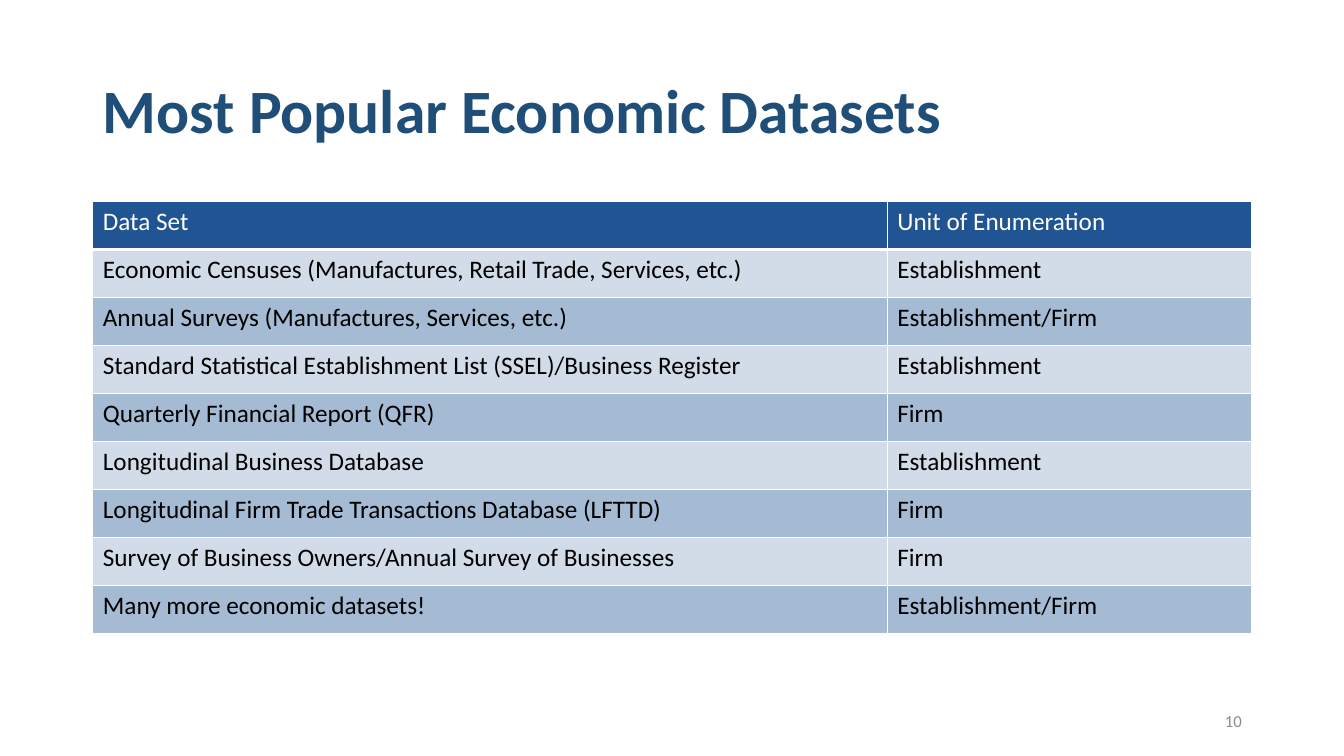
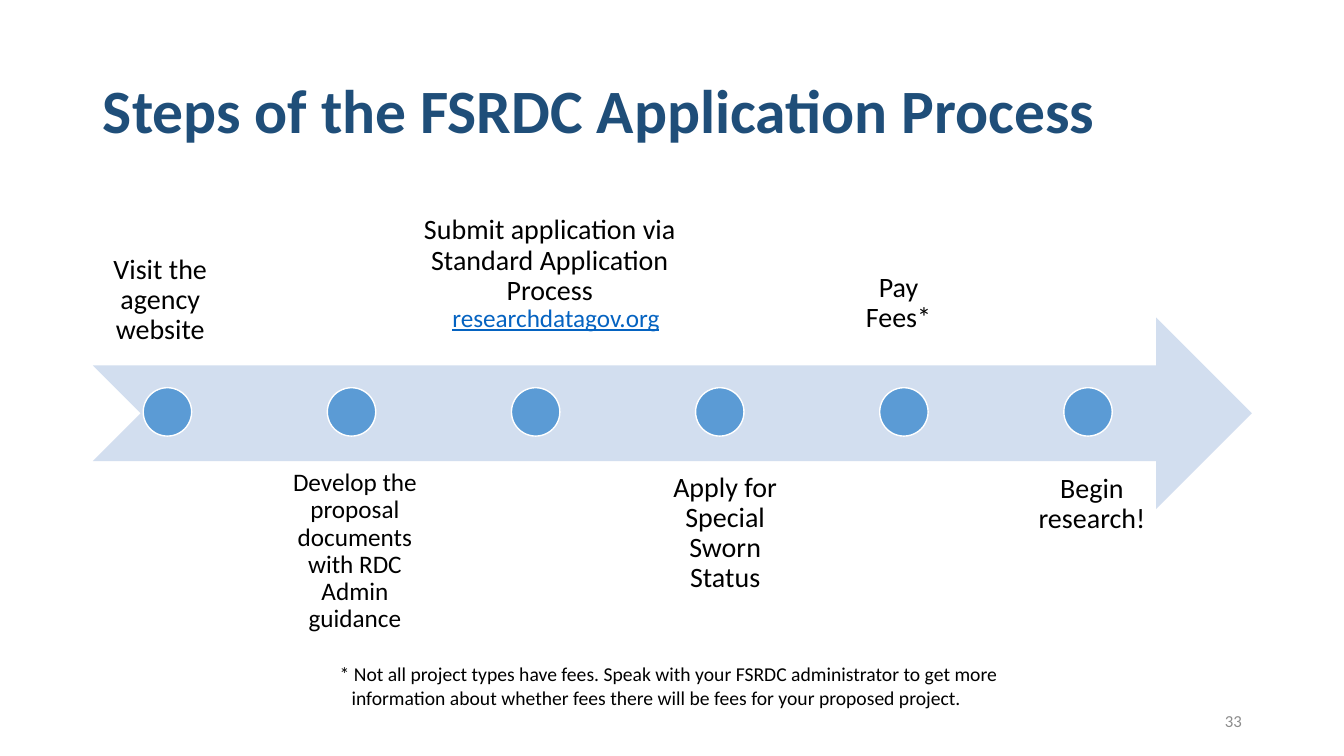
from lxml import etree
from pptx import Presentation
from pptx.dml.color import RGBColor
from pptx.enum.shapes import MSO_SHAPE as Shape
from pptx.enum.text import MSO_ANCHOR as Anchor, MSO_AUTO_SIZE as AutoSize, PP_ALIGN as Align
from pptx.oxml.ns import qn
from pptx.util import Cm, Pt

FONT = "Calibri"
NAVY = RGBColor(0x1F, 0x4E, 0x79)
TABLE_BLUE = RGBColor(0x20, 0x54, 0x93)
PALE_BLUE = RGBColor(0xD2, 0xDE, 0xEF)
DOT_BLUE = RGBColor(0x5B, 0x9B, 0xD5)
LINK_BLUE = RGBColor(0x05, 0x63, 0xC1)
GRAY = RGBColor(0x8C, 0x8C, 0x8C)
BLACK = RGBColor(0, 0, 0)
WHITE = RGBColor(0xFF, 0xFF, 0xFF)

LEFT, CONTENT_WIDTH = 2.34, 29.21
COLUMN_WIDTHS = (20.02, 9.19)
ROW_HEIGHT = 1.21
FIRST_DOT, DOT_STEP, DOT_TOP, DOT_SIZE = 3.61, 4.64, 9.77, 1.22

DATASETS = [
    ("Data Set", "Unit of Enumeration"),
    ("Economic Censuses (Manufactures, Retail Trade, Services, etc.)", "Establishment"),
    ("Annual Surveys (Manufactures, Services, etc.)", "Establishment/Firm"),
    ("Standard Statistical Establishment List (SSEL)/Business Register", "Establishment"),
    ("Quarterly Financial Report (QFR)", "Firm"),
    ("Longitudinal Business Database", "Establishment"),
    ("Longitudinal Firm Trade Transactions Database (LFTTD)", "Firm"),
    ("Survey of Business Owners/Annual Survey of Businesses", "Firm"),
    ("Many more economic datasets!", "Establishment/Firm"),
]

# Text, box (left, top, width, height), text size, inset
STEPS = [
    ("Visit the agency website", (2.34, 4.29, 3.4, 4.83), 20, 0.41),
    ("Develop the proposal documents with RDC Admin guidance",
     (6.81, 11.48, 4.27, 4.83), 18, 0.36),
    ("Submit application via Standard Application Process",
     (10.26, 4.29, 7.19, 3.84), 20, 0.41),
    ("Apply for Special Sworn Status", (16.28, 11.51, 3.99, 4.83), 20, 0.41),
    ("Pay Fees*", (21.36, 6.98, 2.57, 1.83), 20, 0.41),
    ("Begin research!", (25.4, 11.53, 4.24, 4.83), 20, 0.41),
]


def add_span(para, text, size, color, bold=False, underline=False):
    span = para.add_run()
    span.text = text
    font = span.font
    font.name, font.size = FONT, Pt(size)
    font.bold, font.underline = bold, underline
    font.color.rgb = color


def add_text(slide, place, text, size, color=BLACK, align=Align.LEFT,
             anchor=Anchor.TOP, inset=None, spacing=None, underline=False):
    """Add a wrapping one-paragraph text box and return its paragraph."""
    box = slide.shapes.add_textbox(*map(Cm, place))
    frame = box.text_frame
    frame.word_wrap = True
    frame.vertical_anchor = anchor
    if inset is not None:
        frame.margin_left = frame.margin_right = Cm(inset)
        frame.margin_top = frame.margin_bottom = Cm(inset)
    para = frame.paragraphs[0]
    para.alignment = align
    para.line_spacing = spacing
    add_span(para, text, size, color, underline=underline)
    return para


def add_figure(slide, kind, place, fill, line=None):
    figure = slide.shapes.add_shape(kind, *map(Cm, place))
    figure.shadow.inherit = False
    figure.fill.solid()
    figure.fill.fore_color.rgb = fill
    if line is None:
        figure.line.fill.background()
    else:
        figure.line.color.rgb = line
        figure.line.width = Pt(1)


def add_slide(deck, heading, number):
    """Add a slide with the shared title style and page number."""
    slide = deck.slides.add_slide(deck.slide_layouts[5])
    title = slide.shapes.title
    title.left, title.top = Cm(LEFT), Cm(1.02)
    title.width, title.height = Cm(CONTENT_WIDTH), Cm(3.68)
    frame = title.text_frame
    frame.auto_size = AutoSize.NONE
    frame.vertical_anchor = Anchor.MIDDLE
    para = frame.paragraphs[0]
    para.alignment = Align.LEFT
    para.line_spacing = 0.9
    add_span(para, heading, 44, NAVY, bold=True)
    add_text(slide, (23.93, 17.65, 7.62, 1.02), str(number), 12, GRAY,
             Align.RIGHT, Anchor.MIDDLE)
    return slide


def style_cell(cell, opacity, bottom_width):
    """Fill a cell with the table blue and draw white borders around it."""
    cell.fill.solid()
    cell.fill.fore_color.rgb = TABLE_BLUE
    properties = cell._tc.get_or_add_tcPr()
    if opacity < 100:
        color = properties.find(".//" + qn("a:srgbClr"))
        etree.SubElement(color, qn("a:alpha"), val=str(opacity * 1000))
    widths = {"a:lnL": 1, "a:lnR": 1, "a:lnT": 1, "a:lnB": bottom_width}
    for position, (side, width) in enumerate(widths.items()):
        border = etree.Element(qn(side), w=str(Pt(width)))
        fill = etree.SubElement(border, qn("a:solidFill"))
        etree.SubElement(fill, qn("a:srgbClr"), val=str(WHITE))
        properties.insert(position, border)


def add_dataset_table(slide):
    table = slide.shapes.add_table(
        len(DATASETS), len(COLUMN_WIDTHS), Cm(LEFT), Cm(5.08),
        Cm(CONTENT_WIDTH), Cm(ROW_HEIGHT * len(DATASETS))).table
    table.first_row = table.horz_banding = False
    for column, width in zip(table.columns, COLUMN_WIDTHS):
        column.width = Cm(width)
    for index, texts in enumerate(DATASETS):
        header = index == 0
        opacity = 100 if header else 20 if index % 2 else 40
        table.rows[index].height = Cm(ROW_HEIGHT)
        for cell, text in zip(table.rows[index].cells, texts):
            style_cell(cell, opacity, 3 if header else 1)
            add_span(cell.text_frame.paragraphs[0], text, 18, WHITE if header else BLACK)


def add_timeline(slide):
    """Draw the arrow with one dot per step, labels above and below in turn."""
    add_figure(slide, Shape.NOTCHED_RIGHT_ARROW, (LEFT, 8, CONTENT_WIDTH, 4.83), PALE_BLUE)
    for index, (text, place, size, inset) in enumerate(STEPS):
        anchor = Anchor.TOP if index % 2 else Anchor.BOTTOM
        add_text(slide, place, text, size, align=Align.CENTER, anchor=anchor,
                 inset=inset, spacing=0.9)
        dot_left = FIRST_DOT + index * DOT_STEP
        add_figure(slide, Shape.OVAL, (dot_left, DOT_TOP, DOT_SIZE, DOT_SIZE),
                   DOT_BLUE, WHITE)


def add_footnote(slide):
    para = add_text(
        slide, (8.31, 16.56, 17.35, 1.45),
        "* Not all project types have fees. Speak with your FSRDC administrator to get more "
        "information about whether fees there will be fees for your proposed project.", 14)
    properties = para._p.get_or_add_pPr()
    properties.set("marL", str(Cm(0.3)))
    properties.set("indent", str(-Cm(0.3)))


def main():
    deck = Presentation()
    deck.slide_width, deck.slide_height = Cm(33.87), Cm(19.05)

    datasets = add_slide(deck, "Most Popular Economic Datasets", 10)
    add_dataset_table(datasets)

    process = add_slide(deck, "Steps of the FSRDC Application Process", 33)
    add_timeline(process)
    add_text(process, (11.15, 7.49, 5.79, 1.8), "researchdatagov.org", 18,
             LINK_BLUE, underline=True)
    add_footnote(process)

    deck.save("out.pptx")


if __name__ == "__main__":
    main()
